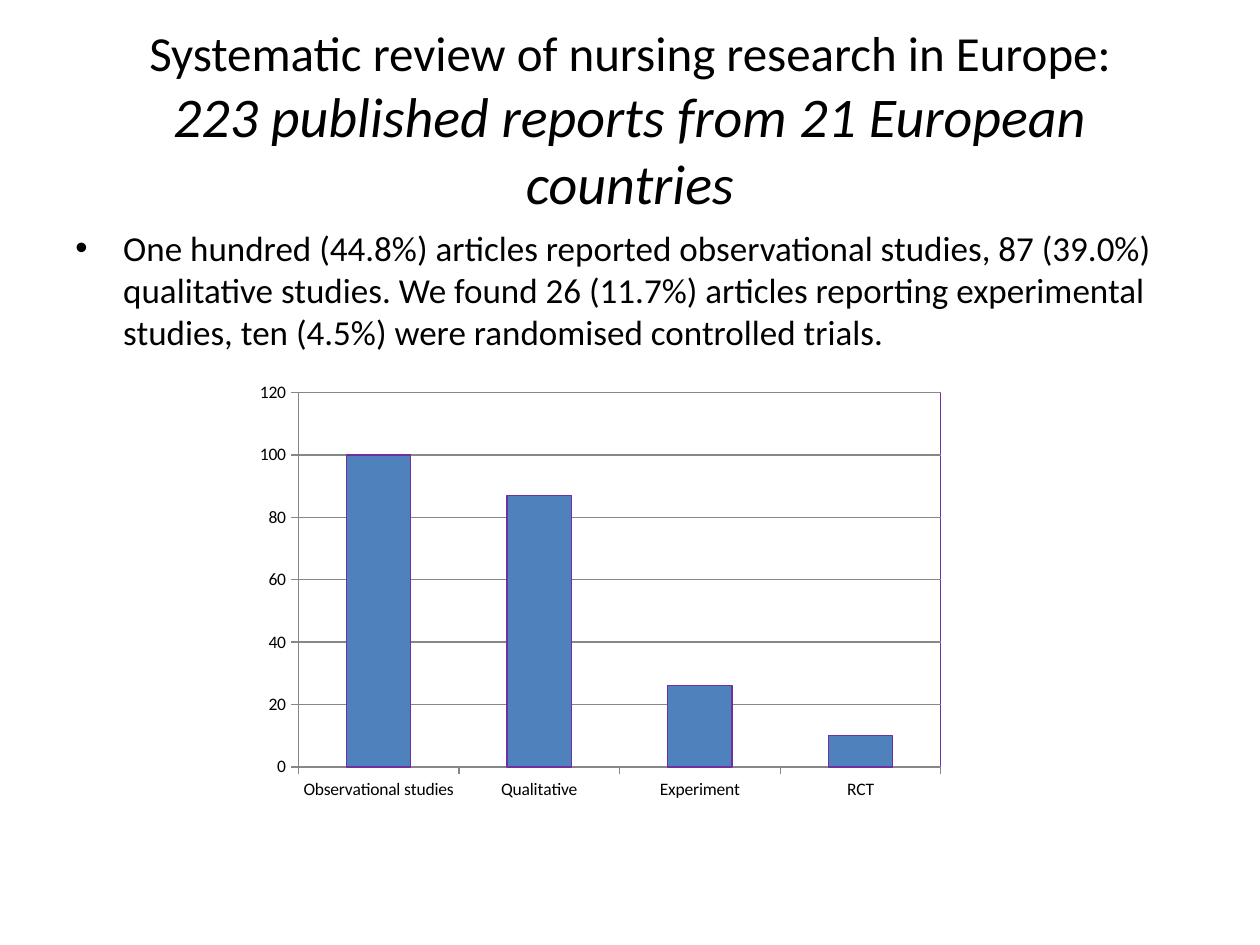
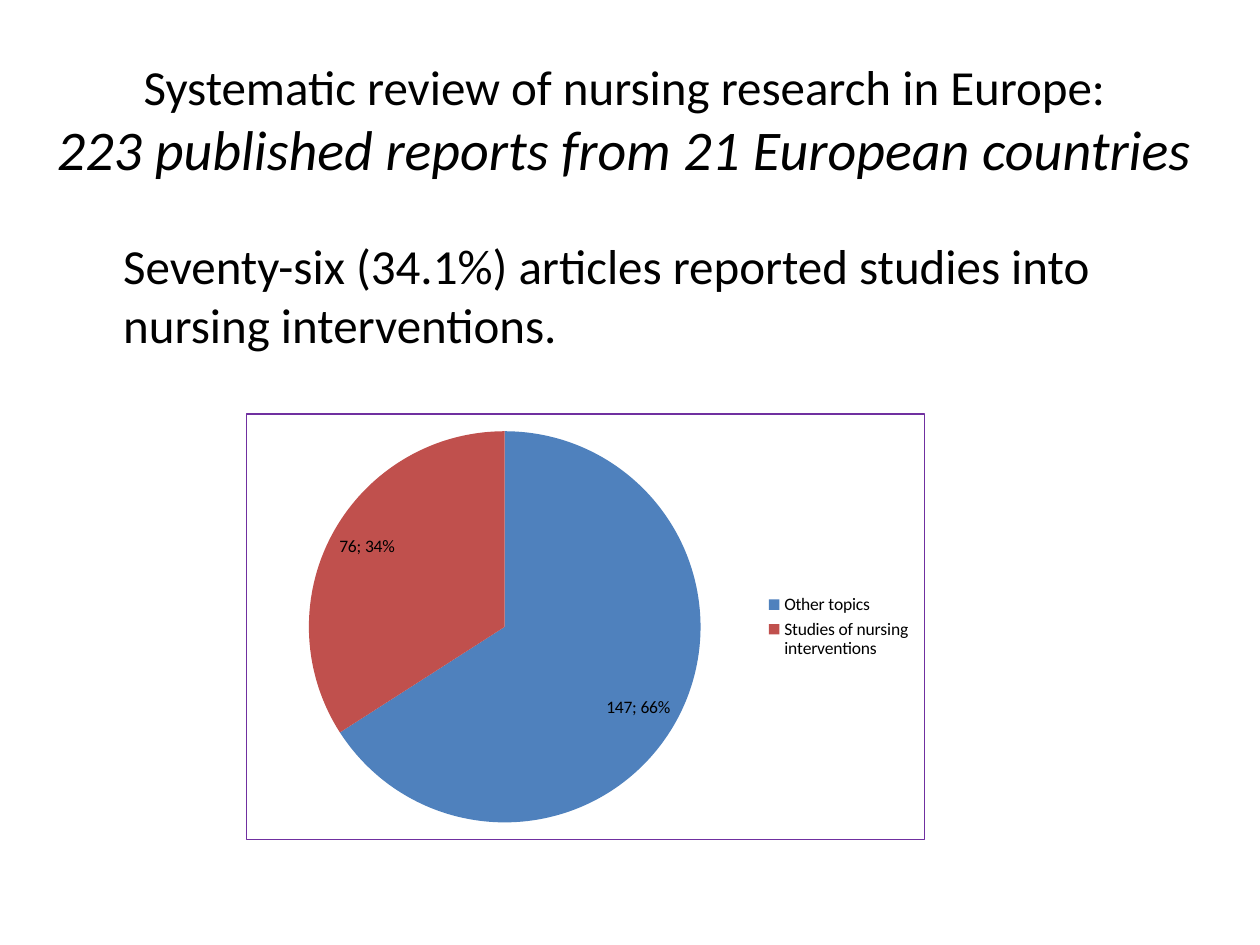
from lxml import etree
from pptx import Presentation
from pptx.chart.data import CategoryChartData
from pptx.dml.color import RGBColor
from pptx.enum import chart as ch, text
from pptx.oxml import ns
from pptx.util import Inches, Pt

FONT = "Calibri"
BLACK = RGBColor(0x00, 0x00, 0x00)
BLUE = RGBColor(0x4F, 0x81, 0xBD)
RED = RGBColor(0xC0, 0x50, 0x4D)
PURPLE = RGBColor(0x70, 0x30, 0xA0)
GREY = RGBColor(0x87, 0x87, 0x87)

HEADING = "Systematic review of nursing research in Europe:"
SUBHEADING = "223 published reports from 21 European countries"
BODY_BOX = (0.5, 1.75, 9, 4.95)
INDENT = 0.38


def style(font, size, italic=False):
    """Apply the common typeface and colour to a font."""
    font.name = FONT
    font.size = Pt(size)
    font.italic = italic
    font.color.rgb = BLACK


def add_text(s, box):
    """Add a wrapping text box and return its text frame."""
    tf = s.shapes.add_textbox(*map(Inches, box)).text_frame
    tf.word_wrap = True
    return tf


def add_title(s, box):
    """Add the shared two-part title, centred in its box."""
    tf = add_text(s, box)
    tf.vertical_anchor = text.MSO_ANCHOR.MIDDLE
    tf.text = f"{HEADING}\n{SUBHEADING}"
    for p, size, italic in zip(tf.paragraphs, (28, 32), (False, True)):
        p.alignment = text.PP_ALIGN.CENTER
        style(p.runs[0].font, size, italic)


def add_body(s, box, words, size, bullet=False, inset=0.05):
    """Add one indented paragraph, with or without a bullet."""
    tf = add_text(s, box)
    tf.margin_top = Inches(inset)
    tf.text = words
    p = tf.paragraphs[0]
    style(p.runs[0].font, size)
    pPr = p._p.get_or_add_pPr()
    pPr.set("marL", str(Inches(INDENT)))
    if bullet:
        pPr.set("indent", str(-Inches(INDENT)))
        etree.SubElement(pPr, ns.qn("a:buFont")).set("typeface", "Arial")
        etree.SubElement(pPr, ns.qn("a:buChar")).set("char", "•")


def outline(parent, successors):
    """Outline a chart part in purple, placed before its successors."""
    spPr = parent.makeelement(ns.qn("c:spPr"))
    ln = etree.SubElement(spPr, ns.qn("a:ln"), w=str(Pt(0.75)))
    fill = etree.SubElement(ln, ns.qn("a:solidFill"))
    etree.SubElement(fill, ns.qn("a:srgbClr"), val=str(PURPLE))
    for tag in successors:
        found = parent.find(ns.qn(tag))
        if found is not None:
            found.addprevious(spPr)
            return
    parent.append(spPr)


def add_chart(s, box, kind, counts):
    """Add a single-series chart with the common text style."""
    data = CategoryChartData()
    data.categories = list(counts)
    data.add_series("Series 1", counts.values())
    chart = s.shapes.add_chart(kind, *map(Inches, box), data).chart
    style(chart.font, 10)
    chart.has_title = False
    chart.has_legend = False
    root = chart._chartSpace
    if root.find(ns.qn("c:roundedCorners")) is None:
        corners = root.makeelement(ns.qn("c:roundedCorners"), {"val": "0"})
        root.find(ns.qn("c:chart")).addprevious(corners)
    return chart


def add_columns(s, box, counts):
    """Add the column chart of study designs."""
    chart = add_chart(s, box, ch.XL_CHART_TYPE.COLUMN_CLUSTERED, counts)
    plot = chart.plots[0]
    plot.gap_width = 150
    plot.vary_by_categories = False
    bars = plot.series[0].format
    bars.fill.solid()
    bars.fill.fore_color.rgb = BLUE
    bars.line.color.rgb = PURPLE
    bars.line.width = Pt(0.75)
    for axis in (chart.category_axis, chart.value_axis):
        axis.major_tick_mark = ch.XL_TICK_MARK.OUTSIDE
        axis.format.line.color.rgb = GREY
    values = chart.value_axis
    values.minimum_scale, values.maximum_scale, values.major_unit = 0, 120, 20
    values.has_major_gridlines = True
    values.major_gridlines.format.line.color.rgb = GREY
    outline(chart._chartSpace.chart.plotArea, ["c:extLst"])


def add_pie(s, box, counts):
    """Add the bordered pie chart of study topics."""
    chart = add_chart(s, box, ch.XL_CHART_TYPE.PIE, counts)
    chart.has_legend = True
    chart.legend.position = ch.XL_LEGEND_POSITION.RIGHT
    chart.legend.include_in_layout = False
    plot = chart.plots[0]
    for i, color in enumerate((BLUE, RED)):
        fill = plot.series[0].points[i].format.fill
        fill.solid()
        fill.fore_color.rgb = color
    plot.has_data_labels = True
    labels = plot.data_labels
    labels.show_value = labels.show_percentage = True
    labels.position = ch.XL_LABEL_POSITION.INSIDE_END
    bubble = labels._element.find(ns.qn("c:showBubbleSize"))
    separator = bubble.makeelement(ns.qn("c:separator"))
    separator.text = "; "
    bubble.addnext(separator)
    outline(chart._chartSpace, ["c:txPr", "c:externalData"])


def designs_slide(prs):
    """Build the slide on study designs."""
    s = prs.slides.add_slide(prs.slide_layouts[6])
    add_title(s, (0.5, 0.32, 9, 1.25))
    add_body(
        s, BODY_BOX,
        "One hundred (44.8%) articles reported observational studies, "
        "87 (39.0%) qualitative studies. We found 26 (11.7%) articles "
        "reporting experimental studies, ten (4.5%) were randomised "
        "controlled trials.",
        20, bullet=True)
    add_columns(s, (1.95, 2.97, 5.63, 3.44), {
        "Observational studies": 100, "Qualitative": 87,
        "Experiment": 26, "RCT": 10})


def interventions_slide(prs):
    """Build the slide on nursing interventions."""
    s = prs.slides.add_slide(prs.slide_layouts[6])
    add_title(s, (0.23, 0.32, 9.45, 1.25))
    add_body(
        s, BODY_BOX,
        "Seventy-six (34.1%) articles reported studies into nursing "
        "interventions.",
        28, inset=0.12)
    add_pie(s, (1.95, 3.28, 5.39, 3.39), {
        "Other topics": 147, "Studies of nursing interventions": 76})


def main():
    """Build and save the presentation."""
    prs = Presentation()
    prs.slide_width, prs.slide_height = Inches(10), Inches(7.5)
    designs_slide(prs)
    interventions_slide(prs)
    prs.save("out.pptx")


if __name__ == "__main__":
    main()
